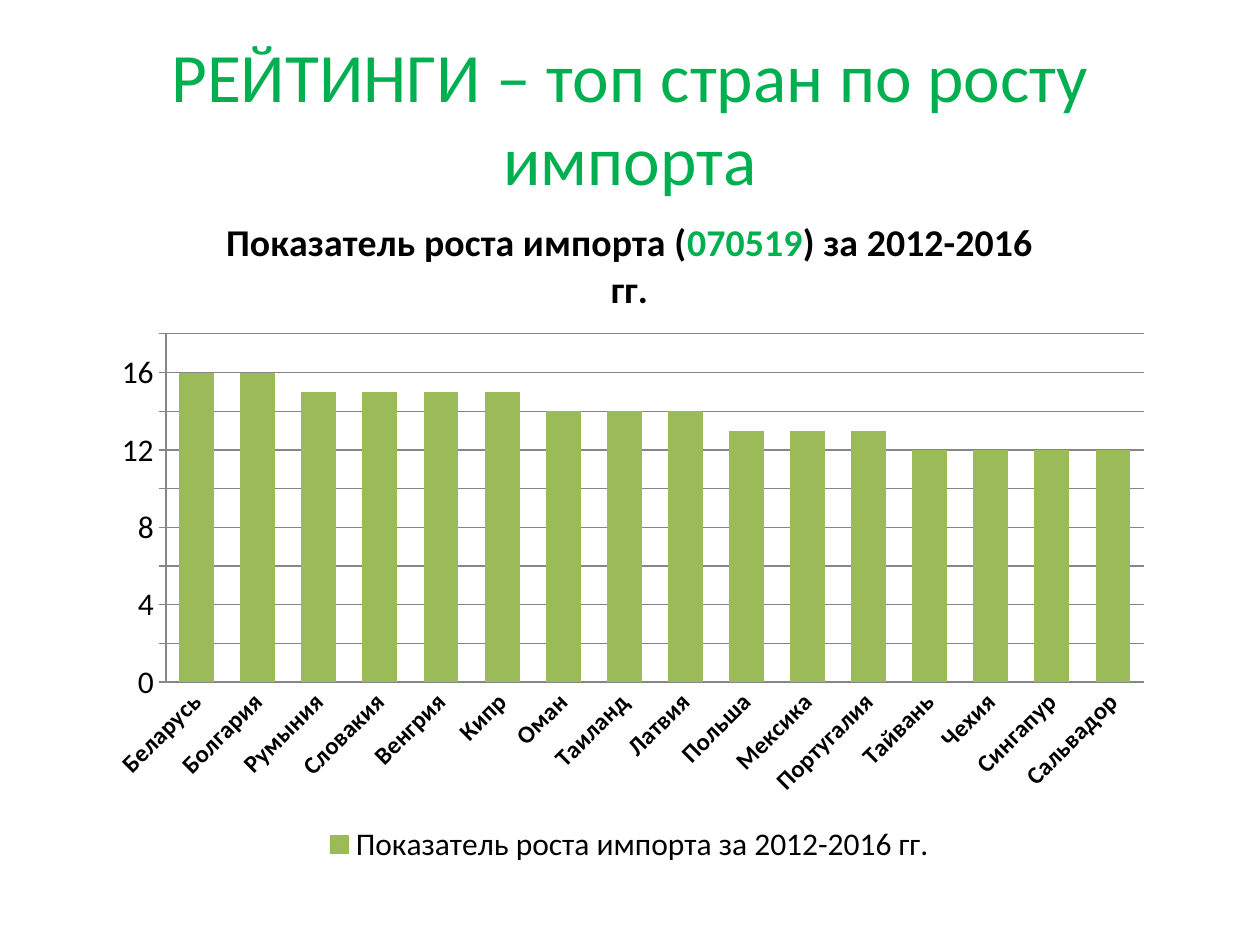
from pptx import Presentation
from pptx.chart.data import CategoryChartData
from pptx.dml.color import RGBColor
from pptx.enum.chart import XL_CHART_TYPE, XL_LEGEND_POSITION, XL_TICK_MARK
from pptx.enum.text import MSO_ANCHOR, PP_ALIGN
from pptx.util import Emu, Pt

PX = 914400 / 126
FONT = "Calibri"
GREEN = RGBColor(0x00, 0xB0, 0x50)
BAR = RGBColor(0x9B, 0xBB, 0x59)
GRID = RGBColor(0x86, 0x86, 0x86)
BLACK = RGBColor(0, 0, 0)
COLUMN = XL_CHART_TYPE.COLUMN_CLUSTERED
BOTTOM = XL_LEGEND_POSITION.BOTTOM
TICK_NONE, TICK_OUT = XL_TICK_MARK.NONE, XL_TICK_MARK.OUTSIDE
MIDDLE, CENTER = MSO_ANCHOR.MIDDLE, PP_ALIGN.CENTER

GROWTH = {
    16: ["Беларусь", "Болгария"],
    15: ["Румыния", "Словакия", "Венгрия", "Кипр"],
    14: ["Оман", "Таиланд", "Латвия"],
    13: ["Польша", "Мексика", "Португалия"],
    12: ["Тайвань", "Чехия", "Сингапур", "Сальвадор"],
}


def px(*lengths):
    return [Emu(round(n * PX)) for n in lengths]


class Deck:
    def __init__(self, width, height):
        self.prs = Presentation()
        self.prs.slide_width, self.prs.slide_height = px(width, height)
        self.s = self.prs.slides.add_slide(self.prs.slide_layouts[6])

    def style(self, font, size, color=BLACK, bold=False):
        font.name, font.size, font.bold = FONT, Pt(size), bold
        font.color.rgb = color

    def text(self, box, text, size, color):
        tf = self.s.shapes.add_textbox(*px(*box)).text_frame
        tf.word_wrap = True
        tf.vertical_anchor = MIDDLE
        p = tf.paragraphs[0]
        p.text, p.alignment = text, CENTER
        self.style(p.font, size, color)

    def chart_title(self, chart, parts):
        """Write (text, colour) parts as one heading."""
        p = chart.chart_title.text_frame.paragraphs[0]
        for text, color in parts:
            r = p.add_run()
            r.text = text
            self.style(r.font, 21.6, color, True)
        chart.chart_title.include_in_layout = False

    def column_chart(self, box, name, groups, title):
        data = CategoryChartData(number_format="0")
        data.categories = [c for names in groups.values() for c in names]
        data.add_series(name, [v for v, names in groups.items() for _ in names])
        chart = self.s.shapes.add_chart(COLUMN, *px(*box), data).chart
        self.style(chart.font, 18)
        self.chart_title(chart, title)

        chart.has_legend = True
        chart.legend.position = BOTTOM
        chart.legend.include_in_layout = False

        plot = chart.plots[0]
        plot.gap_width, plot.vary_by_categories = 75, False
        fill = plot.series[0].format.fill
        fill.solid()
        fill.fore_color.rgb = BAR

        cat, val = chart.category_axis, chart.value_axis
        cat.major_tick_mark, val.major_tick_mark = TICK_NONE, TICK_OUT
        self.style(cat.tick_labels.font, 14, bold=True)
        cat._element.txPr.bodyPr.set("rot", "-2700000")
        val.minimum_scale, val.maximum_scale, val.major_unit = 0, 18, 2
        val.has_major_gridlines = True
        for part in (cat, val, val.major_gridlines):
            part.format.line.color.rgb = GRID
            part.format.line.width = Pt(0.75)


def main():
    deck = Deck(1260, 945)
    deck.text((63, 38, 1134, 157), "РЕЙТИНГИ – топ стран по росту импорта", 39.6, GREEN)
    deck.column_chart(
        (94, 193, 1071, 677),
        "Показатель роста импорта за 2012-2016 гг.",
        GROWTH,
        [("Показатель роста импорта (", BLACK), ("070519", GREEN), (") за 2012-2016 гг.", BLACK)],
    )
    deck.prs.save("out.pptx")


if __name__ == "__main__":
    main()
